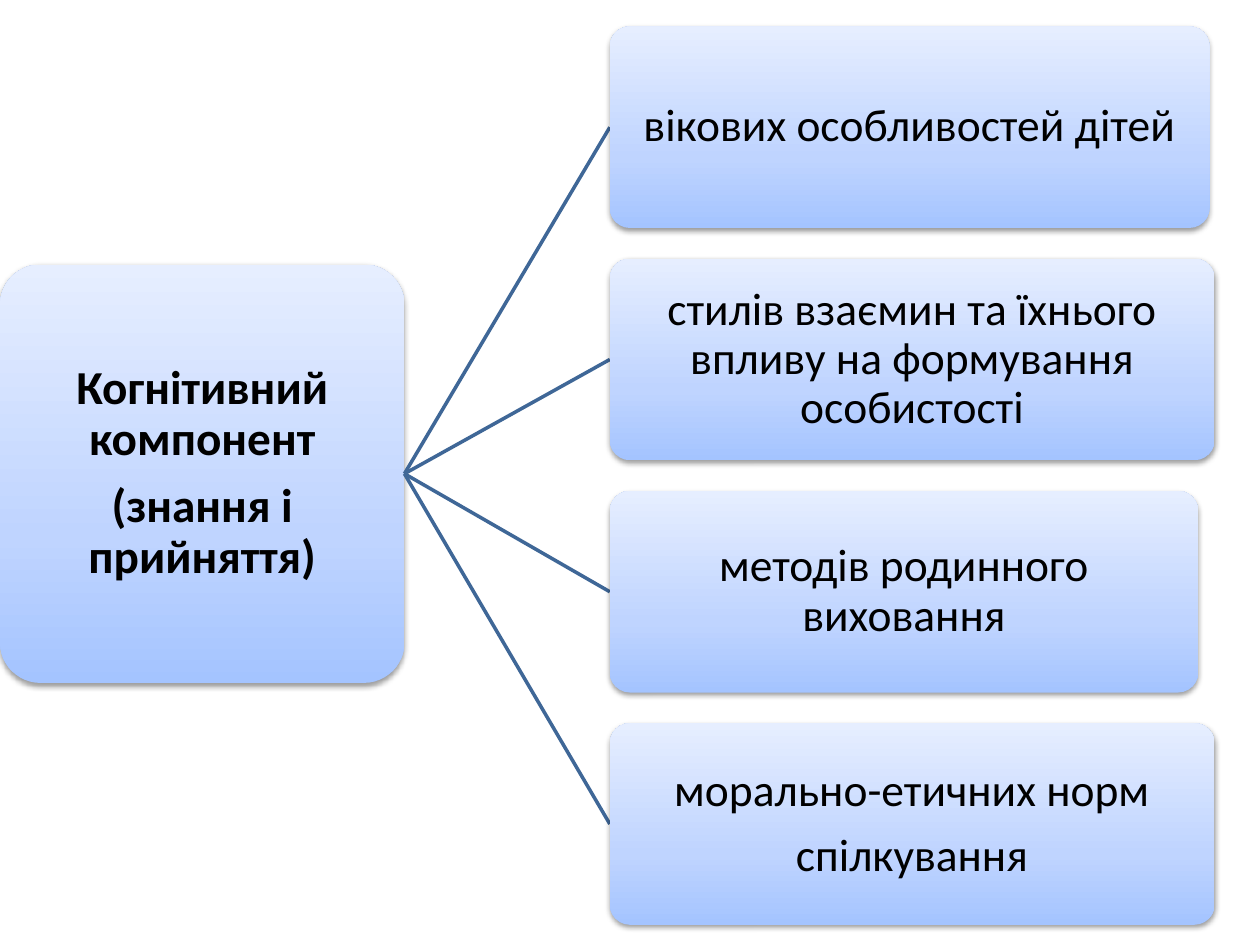
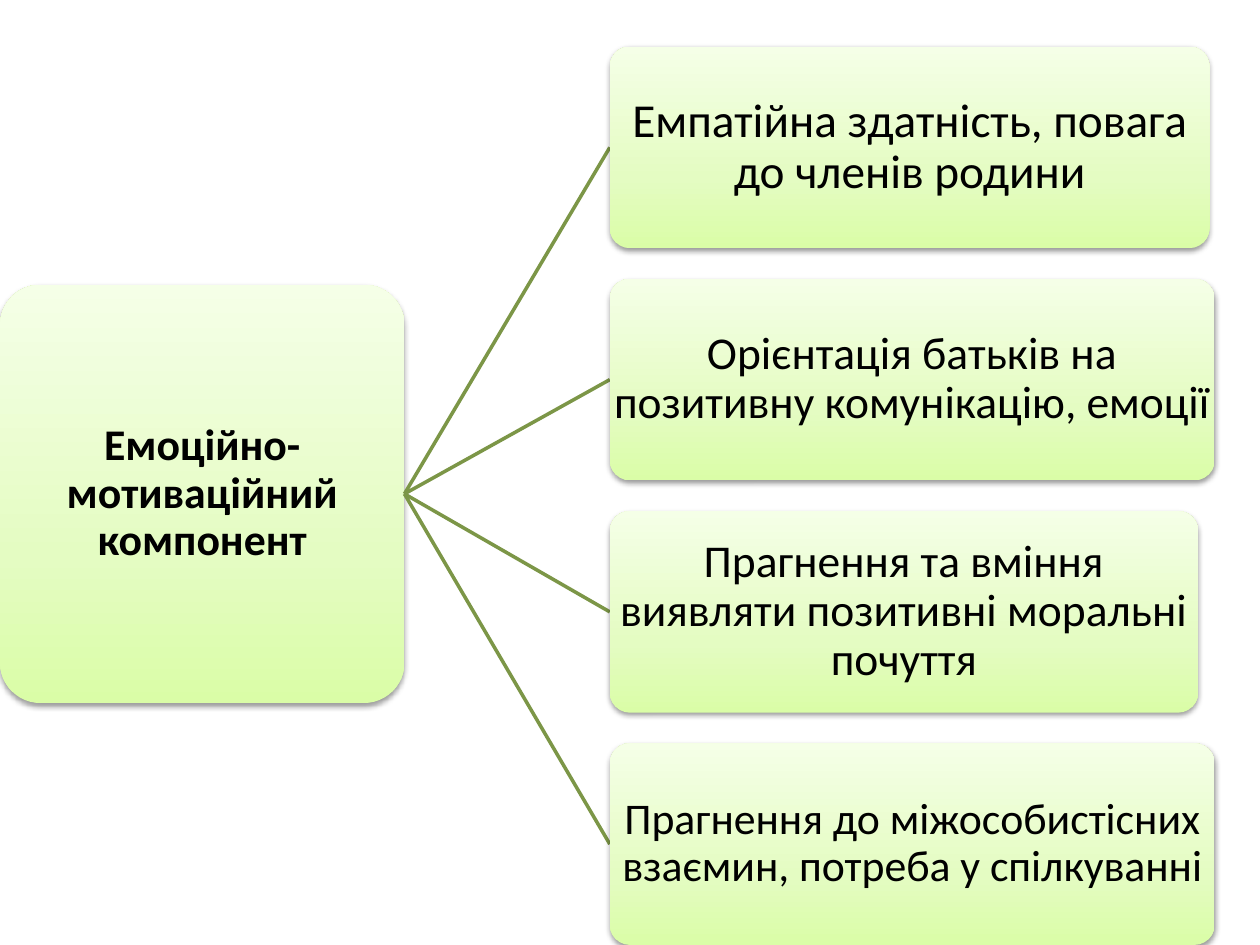
from copy import deepcopy

from lxml import etree
from pptx import Presentation
from pptx import util as u
from pptx.dml.color import RGBColor
from pptx.enum import shapes, text
from pptx.oxml.ns import qn

COLORS = {
    "text": "000000",
    "shadow": "000000",
    "blue": {"line": "3F6797", "grad": ("A4C4FF", "BFD4FF", "E6EEFF")},
    "green": {"line": "7C9647", "grad": ("DAFDA7", "E4FCC2", "F5FFE7")},
}
FONT = "Calibri"
STOPS = (0, 0.35, 1)
INSET = 0.02
ROOT_W, ROOT_H, ROOT_DROP = 3.21, 3.32, 1.89
BRANCH_X, BRANCH_H = 4.84, 1.6
BRANCH_WIDTHS = (4.76, 4.8, 4.67, 4.8)
DIAGRAM_H = 7.13

SLIDES = [
    {
        "theme": "blue",
        "top": 0.21,
        "root": (["Когнітивний компонент", "(знання і прийняття)"], 27),
        "branches": [
            (["вікових особливостей дітей"], 26),
            (["стилів взаємин та їхнього впливу на формування особистості"], 26),
            (["методів родинного виховання"], 26),
            (["морально-етичних норм", "спілкування"], 26),
        ],
    },
    {
        "theme": "green",
        "top": 0.37,
        "root": (["Емоційно-мотиваційний компонент"], 25),
        "branches": [
            (["Емпатійна здатність, повага до членів родини"], 27),
            (["Орієнтація батьків на позитивну комунікацію, емоції"], 26),
            (["Прагнення та вміння виявляти позитивні моральні почуття"], 26),
            (["Прагнення до міжособистісних взаємин, потреба у спілкуванні"], 25),
        ],
    },
]


def rgb(value):
    """Turn a hex string into a colour."""
    return RGBColor.from_string(value)


def fill_gradient(sp, colors):
    """Fill a shape with three stops running from bottom to top."""
    sp.fill.gradient()
    sp.fill.gradient_angle = 90
    stops = sp._element.spPr.find(".//" + qn("a:gsLst"))
    stops.append(deepcopy(stops[0]))
    for stop, position, color in zip(sp.fill.gradient_stops, STOPS, colors):
        stop.position = position
        stop.color.rgb = rgb(color)


def add_shadow(sp):
    """Give a shape a soft shadow below it."""
    sp.shadow.inherit = False
    effects = sp._element.spPr.find(qn("a:effectLst"))
    shadow = etree.SubElement(
        effects, qn("a:outerShdw"), blurRad=str(u.Pt(3.1)), dist=str(u.Pt(1.6)),
        dir="5400000", rotWithShape="0")
    color = etree.SubElement(shadow, qn("a:srgbClr"), val=COLORS["shadow"])
    etree.SubElement(color, qn("a:alpha"), val="38000")


def add_label(slide, box, paragraphs, size, bold):
    """Write centred paragraphs over the whole box."""
    tf = slide.shapes.add_textbox(*box).text_frame
    tf.word_wrap = True
    tf.vertical_anchor = text.MSO_ANCHOR.MIDDLE
    tf.margin_left = tf.margin_right = u.Inches(INSET)
    tf.margin_top = tf.margin_bottom = u.Inches(INSET)
    for i, content in enumerate(paragraphs):
        p = tf.add_paragraph() if i else tf.paragraphs[0]
        p.alignment = text.PP_ALIGN.CENTER
        p.line_spacing = 0.9
        p.space_after = u.Pt(0.35 * size)
        r = p.add_run()
        r.text = content
        r.font.name = FONT
        r.font.size = u.Pt(size)
        r.font.bold = bold
        r.font.color.rgb = rgb(COLORS["text"])


def add_node(slide, box, theme, label, bold=False):
    """Draw a rounded card with its label."""
    box = [u.Inches(v) for v in box]
    sp = slide.shapes.add_shape(shapes.MSO_SHAPE.ROUNDED_RECTANGLE, *box)
    sp.adjustments[0] = 0.1
    fill_gradient(sp, theme["grad"])
    sp.line.fill.background()
    add_shadow(sp)
    add_label(slide, box, *label, bold)


def add_link(slide, start, end, color):
    """Draw a plain straight line between two points."""
    points = [u.Inches(v) for v in (*start, *end)]
    link = slide.shapes.add_connector(shapes.MSO_CONNECTOR.STRAIGHT, *points)
    link.line.color.rgb = rgb(color)
    link.line.width = u.Pt(2)
    etree.SubElement(link._element.spPr, qn("a:effectLst"))


def add_tree(slide, top, theme, root, branches):
    """Place the root card and a column of linked branches below top."""
    root_top = top + ROOT_DROP
    add_node(slide, (0, root_top, ROOT_W, ROOT_H), theme, root, bold=True)
    step = (DIAGRAM_H - BRANCH_H) / (len(branches) - 1)
    for i, (label, width) in enumerate(zip(branches, BRANCH_WIDTHS)):
        y = top + i * step
        add_link(slide, (ROOT_W, root_top + ROOT_H / 2),
                 (BRANCH_X, y + BRANCH_H / 2), theme["line"])
        add_node(slide, (BRANCH_X, y, width, BRANCH_H), theme, label)


def main():
    """Build the presentation."""
    prs = Presentation()
    prs.slide_width, prs.slide_height = u.Inches(10), u.Inches(7.5)
    for spec_row in SLIDES:
        slide = prs.slides.add_slide(prs.slide_layouts[6])
        add_tree(slide, spec_row["top"], COLORS[spec_row["theme"]],
                 spec_row["root"], spec_row["branches"])
    prs.save("out.pptx")


if __name__ == "__main__":
    main()
